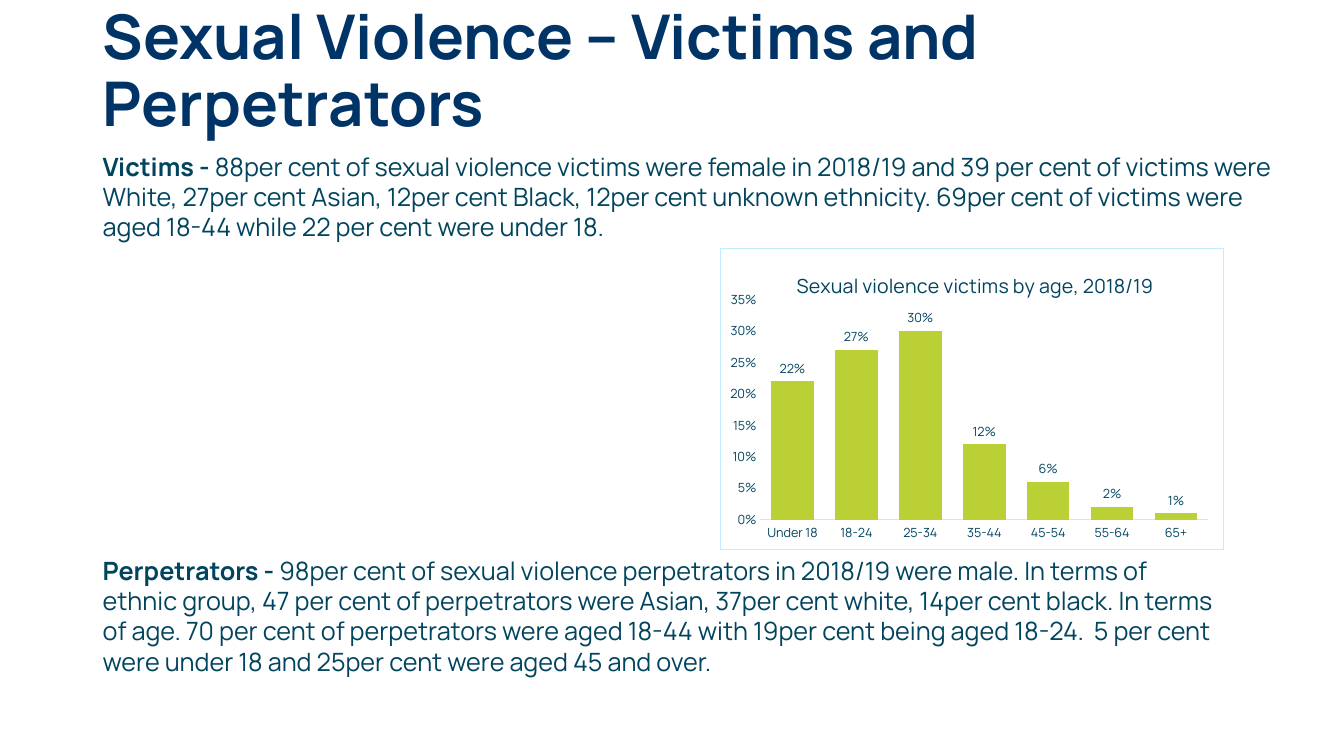
from dataclasses import dataclass

import lxml.etree
import pptx
import pptx.chart.data
import pptx.dml.color
import pptx.enum.chart
import pptx.enum.text
import pptx.oxml
import pptx.oxml.ns
import pptx.util

Pt = pptx.util.Pt
FONT = "Manrope"
NAVY, TEAL, LIME, PALE, WHITE = "003366", "00445E", "BBD034", "C1EEFF", "FFFFFF"
AGES = {"Under 18": 0.22, "18-24": 0.27, "25-34": 0.3, "35-44": 0.12,
        "45-54": 0.06, "55-64": 0.02, "65+": 0.01}


@dataclass
class Box:
    left: float
    top: float
    width: float
    height: float

    def lengths(self) -> list:
        return [Pt(v) for v in (self.left, self.top, self.width, self.height)]


@dataclass
class Finding:
    box: Box
    lead: str
    body: str


FINDINGS = [
    Finding(Box(66.24, 104.4, 871.2, 72.72), "Victims - ",
            "88per cent of sexual violence victims were female in 2018/19 and 39 per cent "
            "of victims were White, 27per cent Asian, 12per cent Black, 12per cent unknown "
            "ethnicity. 69per cent of victims were aged 18-44 while 22 per cent were under 18."),
    Finding(Box(66.24, 393.12, 807.84, 94.32), "Perpetrators - ",
            "98per cent of sexual violence perpetrators in 2018/19 were male. In terms of "
            "ethnic group, 47 per cent of perpetrators were Asian, 37per cent white, 14per "
            "cent black. In terms of age. 70 per cent of perpetrators were aged 18-44 with "
            "19per cent being aged 18-24.  5 per cent were under 18 and 25per cent were "
            "aged 45 and over."),
]


def rgb(color: str) -> pptx.dml.color.RGBColor:
    return pptx.dml.color.RGBColor.from_string(color)


def set_font(font, size: float, color: str, bold: bool = False) -> None:
    font.name = FONT
    font.size = Pt(size)
    font.bold = bold
    font.color.rgb = rgb(color)


def add_title(slide, text: str, box: Box) -> None:
    sp = slide.shapes.title
    sp.left, sp.top, sp.width, sp.height = box.lengths()
    tf = sp.text_frame
    tf.text = text
    tf.word_wrap = True
    tf.auto_size = pptx.enum.text.MSO_AUTO_SIZE.NONE
    tf.vertical_anchor = pptx.enum.text.MSO_ANCHOR.MIDDLE
    p = tf.paragraphs[0]
    p.alignment = pptx.enum.text.PP_ALIGN.LEFT
    p.line_spacing = 0.9
    set_font(p.runs[0].font, 44, NAVY, True)


def add_finding(slide, finding: Finding) -> None:
    tf = slide.shapes.add_textbox(*finding.box.lengths()).text_frame
    tf.word_wrap = True
    tf.auto_size = pptx.enum.text.MSO_AUTO_SIZE.SHAPE_TO_FIT_TEXT
    p = tf.paragraphs[0]
    for text, bold in ((finding.lead, True), (finding.body, False)):
        r = p.add_run()
        r.text = text
        set_font(r.font, 18, TEAL, bold)


def set_layout(parent, index: int, inner: bool, **places: float) -> None:
    qn = pptx.oxml.ns.qn
    for old in parent.findall(qn("c:layout")):
        parent.remove(old)
    layout = lxml.etree.Element(qn("c:layout"))
    manual = lxml.etree.SubElement(layout, qn("c:manualLayout"))
    values = {"layoutTarget": "inner"} if inner else {}
    values.update(xMode="edge", yMode="edge")
    values.update({key: str(value) for key, value in places.items()})
    for key, value in values.items():
        lxml.etree.SubElement(manual, qn(f"c:{key}")).set("val", value)
    parent.insert(index, layout)


def frame_chart(chart_element, fill: str, border: str) -> None:
    chart_element.addnext(pptx.oxml.parse_xml(
        f'<c:spPr {pptx.oxml.ns.nsdecls("c", "a")}>'
        f'<a:solidFill><a:srgbClr val="{fill}"/></a:solidFill>'
        f'<a:ln w="{Pt(0.75)}"><a:solidFill><a:srgbClr val="{border}"/></a:solidFill></a:ln>'
        '</c:spPr>'))


def add_age_chart(slide, title: str, box: Box) -> None:
    data = pptx.chart.data.CategoryChartData(number_format="0%")
    data.categories = list(AGES)
    data.add_series("Series 1", list(AGES.values()))
    kind = pptx.enum.chart.XL_CHART_TYPE.COLUMN_CLUSTERED
    chart = slide.shapes.add_chart(kind, *box.lengths(), data).chart
    set_font(chart.font, 10, TEAL)
    chart.has_legend = False

    chart.has_title = True
    tf = chart.chart_title.text_frame
    tf.text = title
    set_font(tf.paragraphs[0].runs[0].font, 14, TEAL)

    for axis in (chart.category_axis, chart.value_axis):
        axis.has_major_gridlines = False
        axis.major_tick_mark = pptx.enum.chart.XL_TICK_MARK.NONE
        axis.minor_tick_mark = pptx.enum.chart.XL_TICK_MARK.NONE
        set_font(axis.tick_labels.font, 9, TEAL)
    line = chart.category_axis.format.line
    line.color.rgb = rgb(PALE)
    line.width = Pt(0.75)
    chart.value_axis.format.line.fill.background()
    chart.value_axis.minimum_scale = 0
    chart.value_axis.maximum_scale = 0.35
    chart.value_axis.major_unit = 0.05
    chart.value_axis.tick_labels.number_format = "0%"
    chart.value_axis.tick_labels.number_format_is_linked = False

    plot = chart.plots[0]
    plot.vary_by_categories = False
    plot.gap_width = 50
    plot.overlap = -27
    series = plot.series[0]
    series.format.fill.solid()
    series.format.fill.fore_color.rgb = rgb(LIME)
    labels = series.data_labels
    labels.show_value = True
    labels.number_format = "0%"
    labels.number_format_is_linked = False
    labels.position = pptx.enum.chart.XL_LABEL_POSITION.OUTSIDE_END
    set_font(labels.font, 9, TEAL)

    c = chart.element.find(pptx.oxml.ns.qn("c:chart"))
    set_layout(c.find(pptx.oxml.ns.qn("c:title")), 1, False, x=0.145, y=0.06)
    set_layout(c.find(pptx.oxml.ns.qn("c:plotArea")), 0, True,
               x=0.08, y=0.17, w=0.89, h=0.73)
    frame_chart(c, WHITE, PALE)


def main() -> None:
    prs = pptx.Presentation()
    prs.slide_width, prs.slide_height = Pt(960), Pt(540)
    slide = prs.slides.add_slide(prs.slide_layouts[5])
    add_title(slide, "Sexual Violence – Victims and Perpetrators",
              Box(66.24, 0, 768.96, 104.4))
    victims, perpetrators = FINDINGS
    add_finding(slide, victims)
    add_age_chart(slide, "Sexual violence victims by age, 2018/19",
                  Box(514.08, 177.12, 360, 216))
    add_finding(slide, perpetrators)
    prs.save("out.pptx")


if __name__ == "__main__":
    main()
